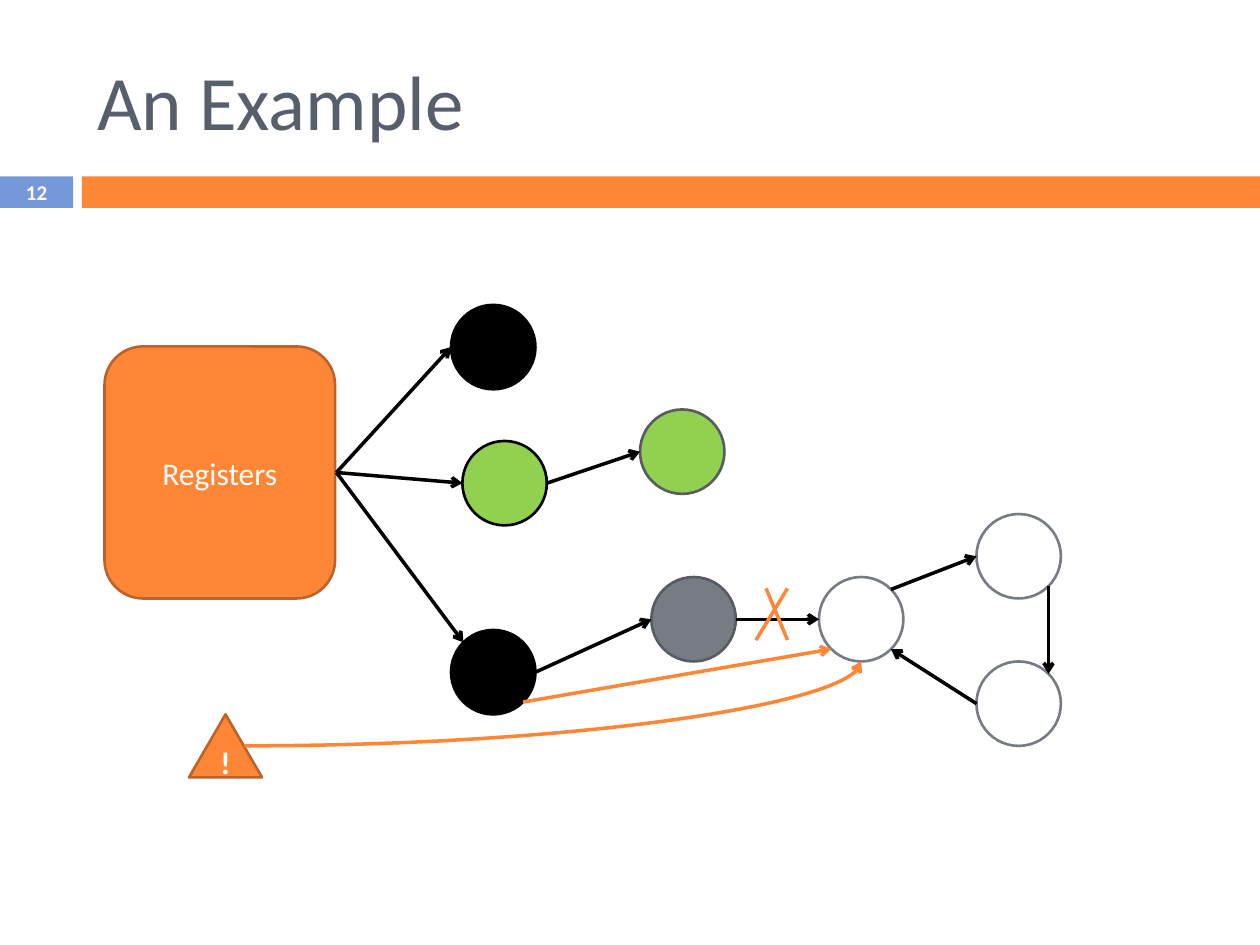
from math import cos, radians, sin

from lxml.etree import SubElement
from pptx import Presentation
from pptx.dml.color import RGBColor
from pptx.enum.shapes import MSO_CONNECTOR, MSO_SHAPE
from pptx.enum.text import MSO_ANCHOR, PP_ALIGN
from pptx.oxml.ns import qn
from pptx.util import Inches, Pt

ORANGE = RGBColor(0xFE, 0x86, 0x37)
DARK_ORANGE = RGBColor(0xBC, 0x63, 0x29)
BLUE = RGBColor(0x75, 0x98, 0xD9)
SLATE = RGBColor(0x57, 0x5F, 0x6D)
GRAY = RGBColor(0x77, 0x7C, 0x84)
DARK_GRAY = RGBColor(0x58, 0x5C, 0x62)
GREEN = RGBColor(0x92, 0xD0, 0x50)
BLACK = RGBColor(0, 0, 0)
WHITE = RGBColor(0xFF, 0xFF, 0xFF)

NODE_SIZE = 0.67


def site(node, angle):
    """Point on a node's rim; angles run clockwise from the right."""
    radius = NODE_SIZE / 2
    left, top = node
    return (left + radius + radius * cos(radians(angle)),
            top + radius + radius * sin(radians(angle)))


class SlideBuilder:
    font = "Calibri"

    def __init__(self, slide):
        self.slide = slide

    def label(self, shape, text, size, color, bold=False, align=PP_ALIGN.CENTER):
        frame = shape.text_frame
        frame.text = text
        frame.word_wrap = True
        frame.vertical_anchor = MSO_ANCHOR.MIDDLE
        paragraph = frame.paragraphs[0]
        paragraph.alignment = align
        font = paragraph.font
        font.name, font.size, font.bold = self.font, Pt(size), bold
        font.color.rgb = color

    def title(self, text, box):
        title = self.slide.shapes.title
        title.left, title.top, title.width, title.height = map(Inches, box)
        self.label(title, text, 44, SLATE, align=PP_ALIGN.LEFT)

    def shape(self, kind, box, fill, outline=None):
        shape = self.slide.shapes.add_shape(kind, *map(Inches, box))
        shape.shadow.inherit = False
        shape.fill.solid()
        shape.fill.fore_color.rgb = fill
        if outline is None:
            shape.line.fill.background()
        else:
            shape.line.color.rgb = outline
            shape.line.width = Pt(1.5)
        return shape

    def node(self, position, fill, outline):
        self.shape(MSO_SHAPE.OVAL, (*position, NODE_SIZE, NODE_SIZE), fill, outline)

    def line(self, start, end, color=BLACK, arrow=True, kind=MSO_CONNECTOR.STRAIGHT):
        line = self.slide.shapes.add_connector(kind, *map(Inches, (*start, *end)))
        line.line.color.rgb = color
        line.line.width = Pt(2)
        properties = line._element.spPr
        if arrow:
            SubElement(properties.find(qn("a:ln")), qn("a:tailEnd"), type="arrow")
        SubElement(properties, qn("a:effectLst"))
        return line

    def curve(self, start, end, color):
        curve = self.line(start, end, color, kind=MSO_CONNECTOR.CURVE)
        # A quarter bend: leaves sideways, arrives upwards
        curve._element.spPr.find(qn("a:prstGeom")).set("prst", "curvedConnector2")


def main():
    prs = Presentation()
    prs.slide_width, prs.slide_height = Inches(10), Inches(7.5)
    builder = SlideBuilder(prs.slides.add_slide(prs.slide_layouts[5]))

    # Heading band with page number
    builder.title("An Example", (0.67, 0.25, 8.92, 1.08))
    page_number = builder.shape(MSO_SHAPE.RECTANGLE, (0, 1.4, 0.58, 0.25), BLUE)
    builder.label(page_number, "12", 12, WHITE, bold=True)
    builder.shape(MSO_SHAPE.RECTANGLE, (0.65, 1.4, 9.35, 0.25), ORANGE)

    # Roots and warning sign
    registers = builder.shape(MSO_SHAPE.FLOWCHART_ALTERNATE_PROCESS,
                              (0.83, 2.75, 1.83, 2), ORANGE, DARK_ORANGE)
    builder.label(registers, "Registers", 18, WHITE)
    warning = builder.shape(MSO_SHAPE.ISOSCELES_TRIANGLE,
                            (1.5, 5.67, 0.58, 0.5), ORANGE, DARK_ORANGE)
    builder.label(warning, "!", 18, WHITE, bold=True)

    # Object graph
    top_black, bottom_black = (3.58, 2.42), (3.58, 5)
    near_green, far_green = (3.67, 3.5), (5.08, 3.25)
    gray = (5.17, 4.58)
    cycle_entry, cycle_top, cycle_bottom = (6.5, 4.58), (7.75, 4.08), (7.75, 5.25)
    for position, fill, outline in (
        (top_black, BLACK, BLACK),
        (near_green, GREEN, BLACK),
        (bottom_black, BLACK, BLACK),
        (gray, GRAY, DARK_GRAY),
        (far_green, GREEN, DARK_GRAY),
        (cycle_entry, WHITE, GRAY),
        (cycle_top, WHITE, GRAY),
        (cycle_bottom, WHITE, GRAY),
    ):
        builder.node(position, fill, outline)

    # References
    registers_exit = (2.67, 3.75)
    for start, end in (
        (registers_exit, site(top_black, 180)),
        (registers_exit, site(near_green, 180)),
        (registers_exit, site(bottom_black, 225)),
        (site(bottom_black, 0), site(gray, 180)),
        (site(near_green, 0), site(far_green, 180)),
        (site(cycle_entry, 315), site(cycle_top, 180)),
        (site(cycle_bottom, 180), site(cycle_entry, 45)),
        (site(cycle_top, 45), site(cycle_bottom, 315)),
        (site(gray, 0), site(cycle_entry, 180)),
    ):
        builder.line(start, end)

    # Deleted reference and its replacement
    builder.line((6.25, 4.67), (6, 5.08), ORANGE, arrow=False)
    builder.line((6.08, 4.67), (6.25, 5.08), ORANGE, arrow=False)
    builder.line(site(bottom_black, 45), site(cycle_entry, 135), ORANGE)
    builder.curve((1.94, 5.92), site(cycle_entry, 90), ORANGE)

    prs.save("out.pptx")


if __name__ == "__main__":
    main()
